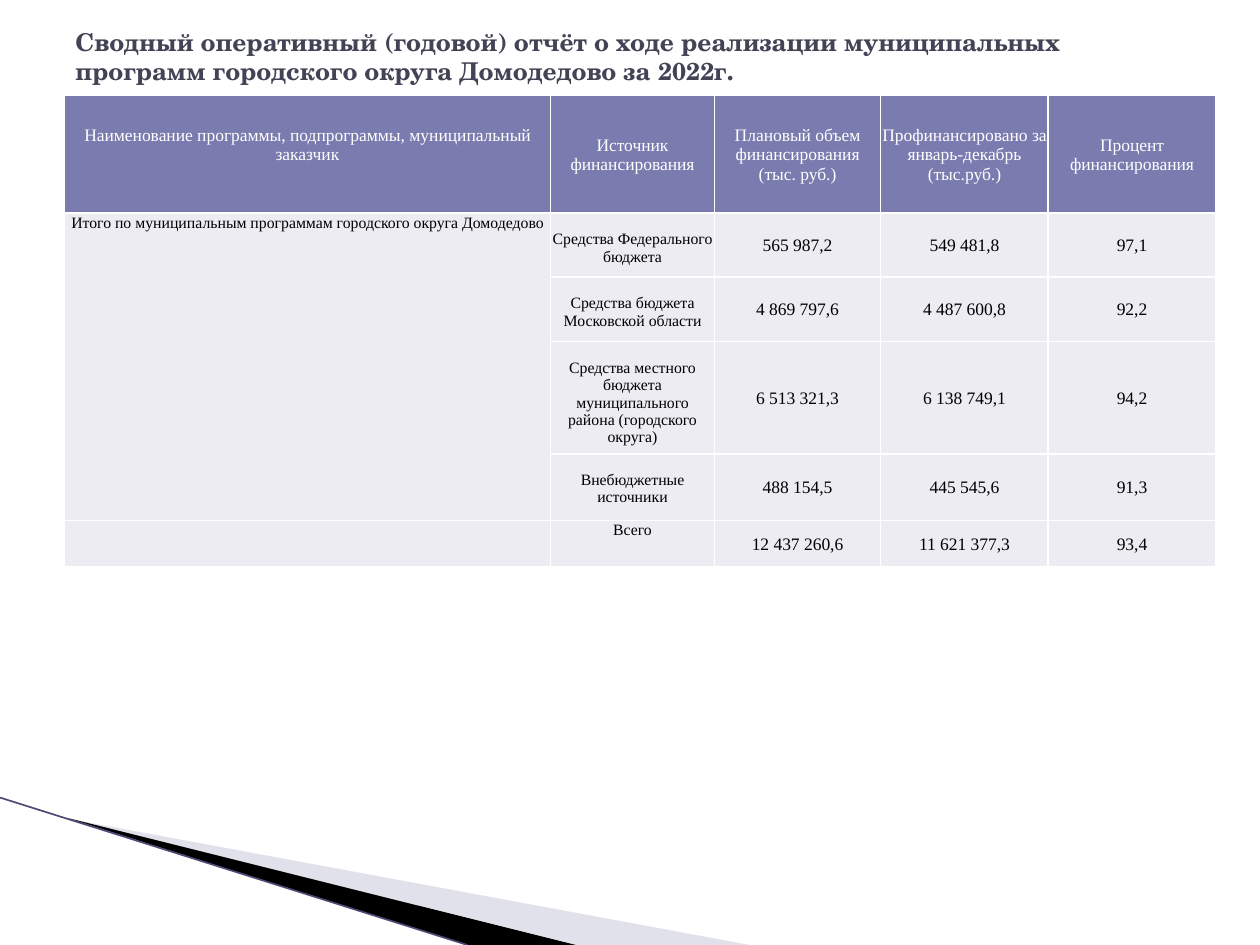
from lxml import etree
from pptx import Presentation
from pptx import util as u
from pptx.dml.color import RGBColor
from pptx.enum import shapes, text
from pptx.oxml import ns

SERIF = "Times New Roman"


def paint(fmt, color, alpha=None):
    """Give a fill or line format a solid colour, with opacity in percent."""
    fill = getattr(fmt, "fill", fmt)
    fill.solid()
    fill.fore_color.rgb = RGBColor.from_string(color)
    if alpha is not None:
        clr = fill._xPr.find(".//" + ns.qn("a:srgbClr"))
        etree.SubElement(clr, ns.qn("a:alpha"), val=str(alpha * 1000))


def add_run(p, words, font, size, color, bold=False):
    r = p.add_run()
    r.text = words
    r.font.name, r.font.size, r.font.bold = font, u.Pt(size), bold
    r.font.color.rgb = RGBColor.from_string(color)


prs = Presentation()
prs.slide_width, prs.slide_height = u.Inches(10), u.Inches(7.5)
s = prs.slides.add_slide(prs.slide_layouts[6])

# Corner decoration
wedges = [
    ([(0.55, 6.5), (5.95, 7.5), (4.56, 7.5)], "B6B6D1", 40),
    ([(0.53, 6.49), (4.57, 7.5), (3.7, 7.5)], "000000", None),
]
for points, color, alpha in wedges:
    pts = [(u.Inches(x), u.Inches(y)) for x, y in points]
    fb = s.shapes.build_freeform(*pts[0])
    fb.add_line_segments(pts[1:], close=True)
    sp = fb.convert_to_shape()
    sp.shadow.inherit = False
    paint(sp.fill, color, alpha)
    sp.line.fill.background()

edge = s.shapes.add_connector(shapes.MSO_CONNECTOR.STRAIGHT, u.Inches(0), u.Inches(6.33),
                              u.Inches(3.71), u.Inches(7.5))
paint(edge.line, "4D4A78")
edge.line.width = u.Pt(0.95)
etree.SubElement(edge._element.spPr, ns.qn("a:effectLst"))

# Title
title = s.shapes.add_textbox(u.Inches(0.5), u.Inches(0.13), u.Inches(9), u.Inches(0.63))
tf = title.text_frame
tf.word_wrap = True
tf.vertical_anchor = text.MSO_ANCHOR.MIDDLE
add_run(tf.paragraphs[0], "Сводный оперативный (годовой) отчёт о ходе реализации муниципальных "
        "программ городского округа Домодедово за 2022г.", "TeX Gyre Schola", 14, "424456", True)

# Financing table
rows = [
    ["Наименование программы, подпрограммы, муниципальный заказчик", "Источник финансирования",
     "Плановый объем финансирования (тыс. руб.)",
     "Профинансировано за январь-декабрь (тыс.руб.)", "Процент финансирования"],
    ["Итого по муниципальным программам городского округа Домодедово",
     "Средства Федерального бюджета", "565 987,2", "549 481,8", "97,1"],
    ["", "Средства бюджета Московской области", "4 869 797,6", "4 487 600,8", "92,2"],
    ["", "Средства местного бюджета муниципального района (городского округа)",
     "6 513 321,3", "6 138 749,1", "94,2"],
    ["", "Внебюджетные источники", "488 154,5", "445 545,6", "91,3"],
    ["", "Всего", "12 437 260,6", "11 621 377,3", "93,4"],
]
widths = [3.86, 1.3, 1.32, 1.33, 1.33]
heights = [0.93, 0.51, 0.51, 0.84, 0.53, 0.37]
tbl = s.shapes.add_table(len(rows), len(widths), u.Inches(0.51), u.Inches(0.76),
                         u.Inches(sum(widths)), u.Inches(sum(heights))).table
for col, width in zip(tbl.columns, widths):
    col.width = u.Inches(width)
for row, height in zip(tbl.rows, heights):
    row.height = u.Inches(height)
tbl.cell(1, 0).merge(tbl.cell(4, 0))

for i, row in enumerate(rows):
    for j, words in enumerate(row):
        cell = tbl.cell(i, j)
        header = i == 0
        label = not header and j < 2
        cell.margin_left = cell.margin_right = cell.margin_top = u.Inches(0.01)
        cell.margin_bottom = 0
        cell.vertical_anchor = text.MSO_ANCHOR.TOP if label else text.MSO_ANCHOR.MIDDLE
        if header and j == 0:
            cell.margin_bottom = u.Inches(0.16)
        if j == 1 and 1 <= i <= 4:
            cell.margin_top = u.Inches(0.14)
        p = cell.text_frame.paragraphs[0]
        p.alignment = text.PP_ALIGN.CENTER
        if words:
            add_run(p, words, SERIF, 9 if label else 10, "FFFFFF" if header else "000000")
        tcPr = cell._tc.get_or_add_tcPr()
        for side in ("a:lnL", "a:lnR", "a:lnT", "a:lnB"):
            ln = etree.SubElement(tcPr, ns.qn(side), w=str(u.Pt(1)))
            solid = etree.SubElement(ln, ns.qn("a:solidFill"))
            etree.SubElement(solid, ns.qn("a:srgbClr"), val="FFFFFF")
        paint(cell.fill, "7A7BAE" if header else "ECECF2")

prs.save("out.pptx")
